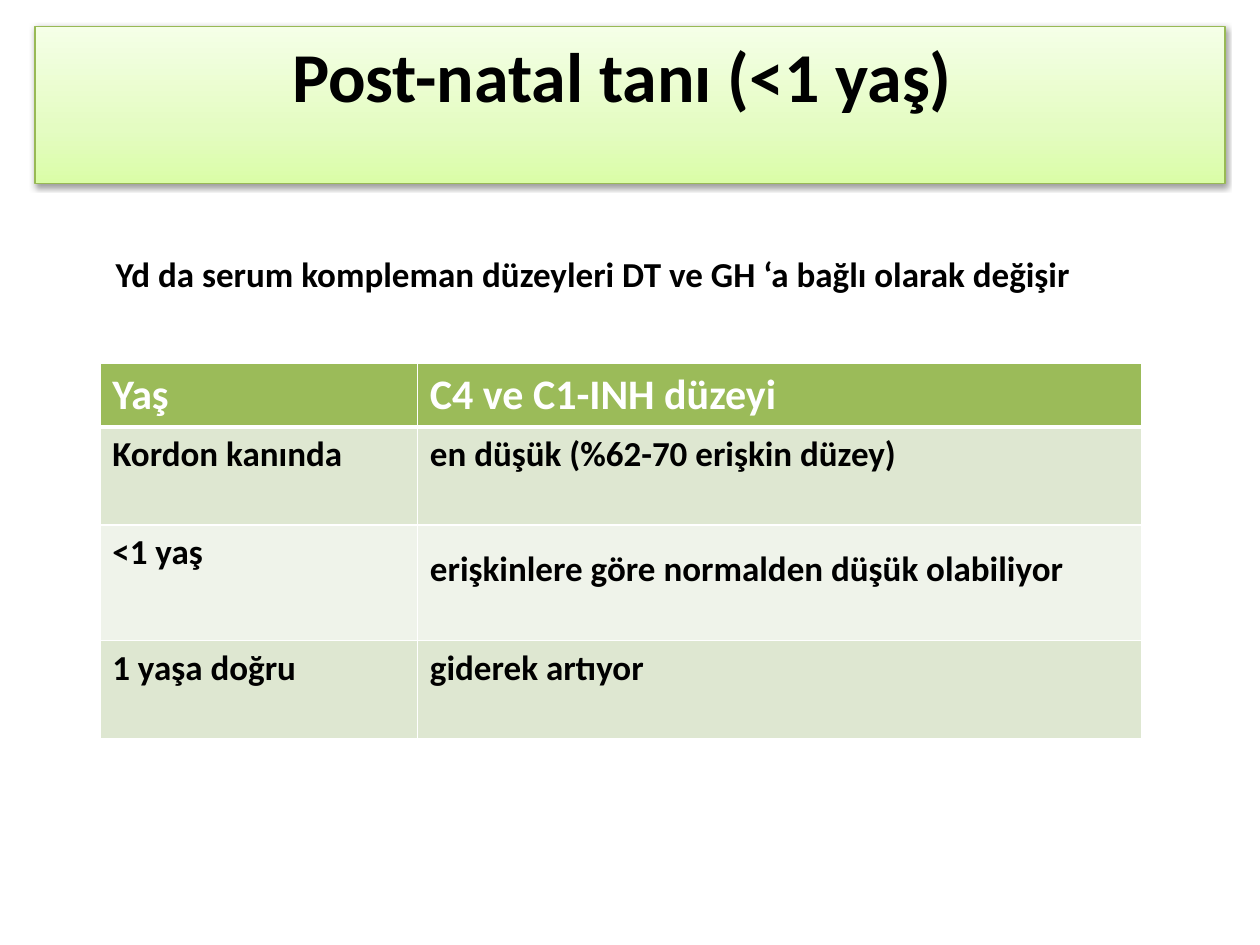
from copy import deepcopy

from lxml.etree import SubElement
from pptx import Presentation
from pptx.dml.color import RGBColor
from pptx.enum.text import MSO_ANCHOR, MSO_AUTO_SIZE, PP_ALIGN
from pptx.oxml import parse_xml
from pptx.oxml.ns import nsdecls, qn
from pptx.util import Pt

FONT = "Calibri"
BLACK = RGBColor(0x00, 0x00, 0x00)
WHITE = RGBColor(0xFF, 0xFF, 0xFF)
GREEN = RGBColor(0x9B, 0xBB, 0x59)
GREEN_LINE = RGBColor(0x98, 0xB9, 0x55)
BAND_DARK = RGBColor(0xDE, 0xE7, 0xD1)
BAND_LIGHT = RGBColor(0xEF, 0xF3, 0xEA)
TITLE_STOPS = [
    (0, RGBColor(0xDA, 0xFD, 0xA7)),
    (0.35, RGBColor(0xE4, 0xFC, 0xC2)),
    (1, RGBColor(0xF5, 0xFF, 0xE7)),
]

ROWS = [
    ("Yaş", "C4 ve C1-INH düzeyi"),
    ("Kordon kanında", "en düşük (%62-70 erişkin düzey)"),
    ("<1 yaş", "erişkinlere göre normalden düşük olabiliyor"),
    ("1 yaşa doğru", "giderek artıyor"),
]
COLUMN_WIDTHS = [181.5, 414]
ROW_HEIGHTS = [36, 56, 66, 56]


def write_text(frame, text, size=20, color=BLACK, align=PP_ALIGN.LEFT, spacing=None):
    para = frame.paragraphs[0]
    para.alignment = align
    para.line_spacing = spacing
    span = para.add_run()
    span.text = text
    span.font.name = FONT
    span.font.size = Pt(size)
    span.font.bold = True
    span.font.color.rgb = color


def place(shape, box):
    shape.left, shape.top, shape.width, shape.height = map(Pt, box)


def add_title(page, box):
    title = page.shapes.title
    place(title, box)

    # Three-colour gradient running upwards
    title.fill.gradient()
    title.fill.gradient_angle = 90
    properties = title._element.spPr
    stop_list = properties.find(qn("a:gradFill")).find(qn("a:gsLst"))
    stop_list.insert(1, deepcopy(stop_list[0]))
    for stop, (position, color) in zip(title.fill.gradient_stops, TITLE_STOPS):
        stop.position = position
        stop.color.rgb = color

    # Outline and soft shadow
    title.line.color.rgb = GREEN_LINE
    title.line.width = Pt(0.75)
    properties.append(parse_xml(
        f'<a:effectLst {nsdecls("a")}>'
        f'<a:outerShdw blurRad="{Pt(3.1)}" dist="{Pt(1.6)}" dir="5400000" rotWithShape="0">'
        '<a:srgbClr val="000000"><a:alpha val="38000"/></a:srgbClr>'
        '</a:outerShdw></a:effectLst>'))

    frame = title.text_frame
    frame.auto_size = MSO_AUTO_SIZE.NONE
    frame.vertical_anchor = MSO_ANCHOR.TOP
    write_text(frame, "Post-natal tanı (<1 yaş) ", size=40, align=PP_ALIGN.CENTER)


def add_statement(page, box):
    frame = page.shapes.add_textbox(*map(Pt, box)).text_frame
    frame.word_wrap = True
    write_text(frame, "Yd da serum kompleman düzeyleri DT ve GH ‘a bağlı olarak değişir",
               spacing=1.4)


def set_borders(cell, bottom):
    properties = cell._tc.get_or_add_tcPr()
    widths = {"a:lnL": 1, "a:lnR": 1, "a:lnT": 1, "a:lnB": bottom}
    for index, (side, width) in enumerate(widths.items()):
        line = SubElement(properties, qn(side), w=str(Pt(width)))
        fill = SubElement(line, qn("a:solidFill"))
        SubElement(fill, qn("a:srgbClr"), val=str(WHITE))
        properties.insert(index, line)


def add_level_table(page, box):
    table = page.shapes.add_table(len(ROWS), len(COLUMN_WIDTHS), *map(Pt, box)).table
    for column, width in zip(table.columns, COLUMN_WIDTHS):
        column.width = Pt(width)
    for row_index, (row, height) in enumerate(zip(table.rows, ROW_HEIGHTS)):
        row.height = Pt(height)
        header = row_index == 0
        band = BAND_DARK if row_index % 2 else BAND_LIGHT
        for column_index, cell in enumerate(row.cells):
            cell.fill.solid()
            cell.fill.fore_color.rgb = GREEN if header else band
            # The line under the header and above the first row is thicker
            set_borders(cell, bottom=3 if header else 1)
            write_text(cell.text_frame, ROWS[row_index][column_index],
                       size=24 if header else 20,
                       color=WHITE if header else BLACK,
                       spacing=1.4 if (row_index, column_index) == (2, 1) else None)
    # Keep the header rule from being covered by the row below
    for cell in table.rows[1].cells:
        cell._tc.tcPr.find(qn("a:lnT")).set("w", str(Pt(3)))


def main():
    deck = Presentation()
    deck.slide_width, deck.slide_height = Pt(720), Pt(540)
    page = deck.slides.add_slide(deck.slide_layouts[5])
    add_level_table(page, (57, 207.5, sum(COLUMN_WIDTHS), sum(ROW_HEIGHTS)))
    add_statement(page, (59, 131, 567, 38))
    add_title(page, (20, 15, 680, 90))
    deck.save("out.pptx")


if __name__ == "__main__":
    main()
